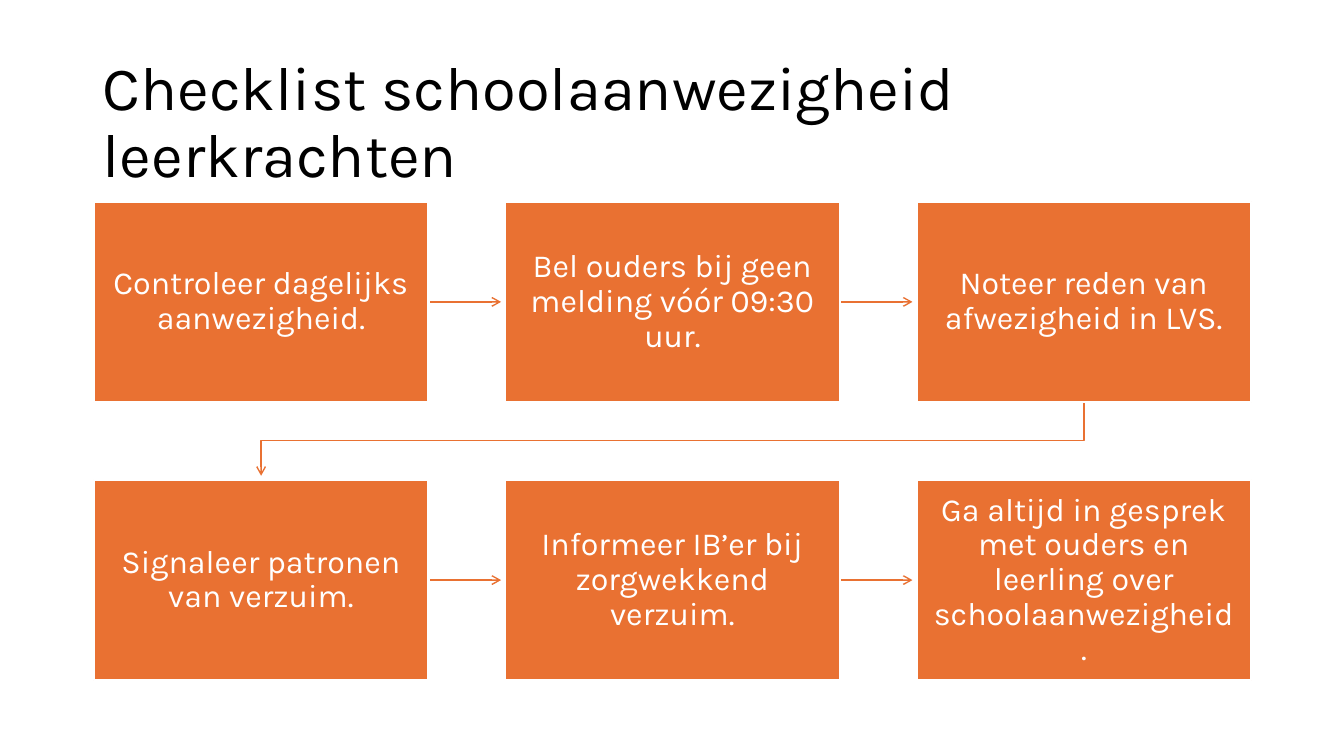
from dataclasses import dataclass
from typing import NamedTuple

from lxml.etree import SubElement
from pptx import Presentation
from pptx.dml.color import RGBColor
from pptx.enum.shapes import MSO_CONNECTOR, MSO_SHAPE
from pptx.enum.text import MSO_ANCHOR, PP_ALIGN
from pptx.oxml.ns import qn
from pptx.shapes.autoshape import Shape
from pptx.shapes.connector import Connector
from pptx.slide import Slide
from pptx.text.text import TextFrame
from pptx.util import Emu, Pt

EMU_PER_PX = 9144  # 100 px to the inch


@dataclass(frozen=True)
class Theme:
    font: str = "Karla"
    accent: RGBColor = RGBColor(0xE9, 0x71, 0x32)
    light: RGBColor = RGBColor(0xFF, 0xFF, 0xFF)
    dark: RGBColor = RGBColor(0x00, 0x00, 0x00)
    title_size: int = 44
    step_size: int = 23
    border_width: float = 1.5
    arrow_width: int = 1


class Area(NamedTuple):
    left: int
    top: int
    width: int
    height: int


@dataclass(frozen=True)
class Step:
    text: str
    column: int
    row: int

    @property
    def area(self) -> Area:
        return Area(93 + 408 * self.column, 200 + 276 * self.row, 332, 199)


THEME = Theme()
TITLE = "Checklist schoolaanwezigheid leerkrachten"
TITLE_AREA = Area(92, 61, 1150, 124)
COLUMNS = 3
ARROW_GAP = 4
STEP_TEXTS = (
    "Controleer dagelijks aanwezigheid.",
    "Bel ouders bij geen melding vóór 09:30 uur.",
    "Noteer reden van afwezigheid in LVS.",
    "Signaleer patronen van verzuim.",
    "Informeer IB’er bij zorgwekkend verzuim.",
    "Ga altijd in gesprek met ouders en leerling over schoolaanwezigheid.",
)
STEPS = [Step(text, index % COLUMNS, index // COLUMNS) for index, text in enumerate(STEP_TEXTS)]


def px(length: int) -> Emu:
    return Emu(length * EMU_PER_PX)


def write_text(frame: TextFrame, text: str, size: int, color: RGBColor, align: PP_ALIGN) -> None:
    frame.word_wrap = True
    frame.vertical_anchor = MSO_ANCHOR.MIDDLE
    para = frame.paragraphs[0]
    para.alignment = align
    para.line_spacing = 0.9
    span = para.add_run()
    span.text = text
    span.font.name = THEME.font
    span.font.size = Pt(size)
    span.font.color.rgb = color


def add_title(page: Slide) -> None:
    box = page.shapes.add_textbox(*map(px, TITLE_AREA))
    write_text(box.text_frame, TITLE, THEME.title_size, THEME.dark, PP_ALIGN.LEFT)


def style_arrow(arrow: Shape | Connector) -> None:
    arrow.line.color.rgb = THEME.accent
    arrow.line.width = Pt(THEME.arrow_width)
    properties = arrow.element.spPr
    SubElement(properties.get_or_add_ln(), qn("a:tailEnd"), type="arrow")
    SubElement(properties, qn("a:effectLst"))


def add_step_arrow(page: Slide, start: Step, end: Step) -> Connector:
    area = start.area
    middle = px(area.top) + px(area.height) // 2
    arrow = page.shapes.add_connector(
        MSO_CONNECTOR.STRAIGHT,
        px(area.left + area.width), middle, px(end.area.left - ARROW_GAP), middle,
    )
    style_arrow(arrow)
    return arrow


def add_row_arrow(page: Slide, start: Step, end: Step) -> None:
    start_x = start.area.left + start.area.width // 2
    start_y = start.area.top + start.area.height
    end_x = end.area.left + end.area.width // 2
    turn_y = (start_y + end.area.top) // 2
    builder = page.shapes.build_freeform(start_x, start_y, scale=EMU_PER_PX)
    corners = [(start_x, turn_y), (end_x, turn_y), (end_x, end.area.top - ARROW_GAP)]
    builder.add_line_segments(corners, close=False)
    arrow = builder.convert_to_shape()
    arrow.fill.background()
    style_arrow(arrow)


def add_step_box(page: Slide, step: Step) -> Shape:
    box = page.shapes.add_shape(MSO_SHAPE.RECTANGLE, *map(px, step.area))
    box.shadow.inherit = False
    box.fill.solid()
    box.fill.fore_color.rgb = THEME.accent
    box.line.color.rgb = THEME.light
    box.line.width = Pt(THEME.border_width)
    frame = box.text_frame
    frame.margin_left = frame.margin_right = px(16)
    frame.margin_top = frame.margin_bottom = px(17)
    write_text(frame, step.text, THEME.step_size, THEME.light, PP_ALIGN.CENTER)
    return box


def main() -> None:
    deck = Presentation()
    deck.slide_width, deck.slide_height = px(1333), px(750)
    page = deck.slides.add_slide(deck.slide_layouts[6])

    add_title(page)

    # Arrows lie behind the boxes
    step_arrows: dict[int, Connector] = {}
    for index, (start, end) in enumerate(zip(STEPS, STEPS[1:])):
        if start.row == end.row:
            step_arrows[index] = add_step_arrow(page, start, end)
        else:
            add_row_arrow(page, start, end)

    # Step boxes, each joined to its outgoing arrow
    boxes = [add_step_box(page, step) for step in STEPS]
    for index, arrow in step_arrows.items():
        arrow.begin_connect(boxes[index], 3)

    deck.save("out.pptx")


if __name__ == "__main__":
    main()
